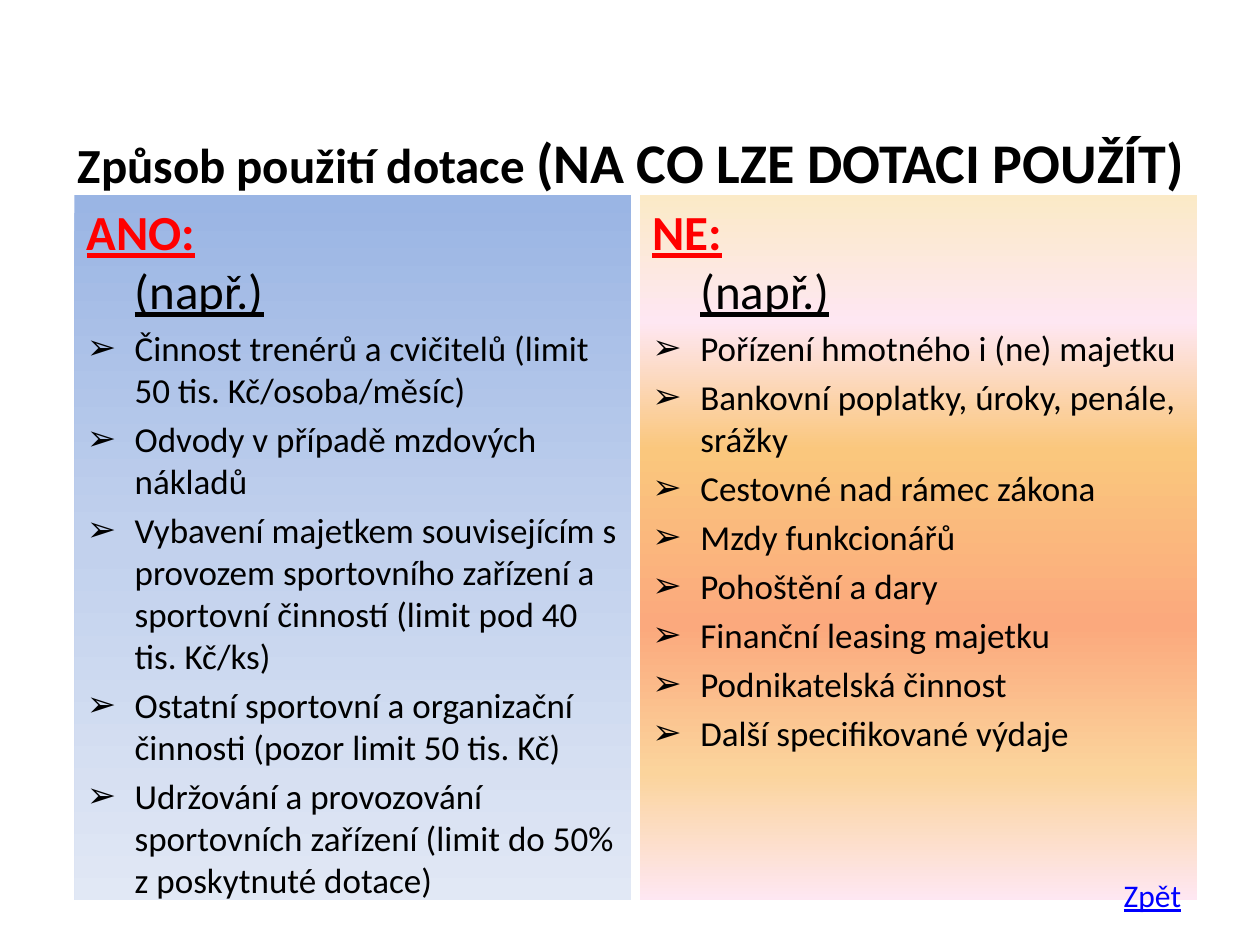
from dataclasses import dataclass

from lxml import etree
from pptx import Presentation
from pptx import util as u
from pptx.dml.color import RGBColor
from pptx.enum import shapes, text
from pptx.oxml.ns import qn


@dataclass(frozen=True)
class Theme:
    font: str = "Calibri"
    ink: str = "000000"
    accent: str = "FF0000"
    link: str = "0000FF"
    yes_fill: tuple = ((0, "9AB5E4"), (50, "C2D1ED"), (100, "E1E8F5"))
    no_fill: tuple = ((0, "FBEAC7"), (18, "FEE7F2"), (36, "FAC77D"),
                      (61, "FBA97D"), (82, "FBD49C"), (100, "FEE7F2"))
    emphasis: int = 32
    heading: int = 28
    body: int = 20
    small: int = 18


THEME = Theme()
INDENT = u.Inches(0.38)

YES_ITEMS = [
    "Činnost trenérů a cvičitelů (limit 50 tis. Kč/osoba/měsíc)",
    "Odvody v případě mzdových nákladů",
    "Vybavení majetkem souvisejícím s provozem sportovního zařízení a "
    "sportovní činností (limit pod 40 tis. Kč/ks)",
    "Ostatní sportovní a organizační činnosti (pozor limit 50 tis. Kč)",
    "Udržování a provozování sportovních zařízení (limit do 50% z poskytnuté dotace)",
]
NO_ITEMS = [
    "Pořízení hmotného i (ne) majetku",
    "Bankovní poplatky, úroky, penále, srážky",
    "Cestovné nad rámec zákona",
    "Mzdy funkcionářů",
    "Pohoštění a dary",
    "Finanční leasing majetku",
    "Podnikatelská činnost",
    "Další specifikované výdaje",
]


def style(font, size, color=THEME.ink, bold=False, underline=False):
    font.name = THEME.font
    font.size = u.Pt(size)
    font.color.rgb = RGBColor.from_string(color)
    font.bold = bold
    font.underline = underline


def add_span(para, words, *look, **more):
    span = para.add_run()
    span.text = words
    style(span.font, *look, **more)


def hang(para, bullet=None):
    """Give the paragraph a hanging indent and, if asked, a bullet."""
    props = para._p.get_or_add_pPr()
    props.set("marL", str(INDENT))
    props.set("indent", str(-INDENT))
    if bullet:
        etree.SubElement(props, qn("a:buFont"), typeface=THEME.font)
        etree.SubElement(props, qn("a:buChar"), char=bullet)


def fill_down(shape, stops):
    """Fill the shape with a gradient running from top to bottom."""
    shape.fill.gradient()
    shape.fill.gradient_angle = 270
    stop_list = shape._element.spPr.find(qn("a:gradFill")).find(qn("a:gsLst"))
    for old in list(stop_list):
        stop_list.remove(old)
    for percent, color in stops:
        stop = etree.SubElement(stop_list, qn("a:gs"), pos=str(percent * 1000))
        etree.SubElement(stop, qn("a:srgbClr"), val=color)


def place_title(page, left, top, width, height):
    title = page.shapes.title
    title.left, title.top, title.width, title.height = left, top, width, height
    frame = title.text_frame
    frame.word_wrap = True
    frame.auto_size = text.MSO_AUTO_SIZE.NONE
    frame.vertical_anchor = text.MSO_ANCHOR.MIDDLE
    frame.margin_left = frame.margin_right = u.Inches(0.05)
    # The panels overlap the foot of the title box, so the text is kept above them.
    frame.margin_top, frame.margin_bottom = 0, u.Inches(0.14)
    para = frame.paragraphs[0]
    para.alignment = text.PP_ALIGN.CENTER
    add_span(para, "Způsob použití dotace ", THEME.heading, bold=True)
    add_span(para, "(NA CO LZE DOTACI POUŽÍT)", THEME.emphasis, bold=True)


def add_panel(page, left, top, width, height, heading, items, stops):
    panel = page.shapes.add_shape(shapes.MSO_SHAPE.RECTANGLE, left, top, width, height)
    panel.shadow.inherit = False
    panel.line.fill.background()
    fill_down(panel, stops)
    frame = panel.text_frame
    frame.word_wrap = True
    frame.vertical_anchor = text.MSO_ANCHOR.TOP

    para = frame.paragraphs[0]
    hang(para)
    para.alignment = text.PP_ALIGN.LEFT
    add_span(para, heading, THEME.heading, THEME.accent, bold=True, underline=True)
    para.add_line_break()
    add_span(para, "(např.)", THEME.heading, underline=True)

    for item in items:
        para = frame.add_paragraph()
        hang(para, "➢")
        para.alignment = text.PP_ALIGN.LEFT
        para.space_before = u.Pt(4)
        para.text = item
        style(para.font, THEME.body)


def add_back_label(page, left, top, width, height):
    box = page.shapes.add_textbox(left, top, width, height)
    box.text_frame.word_wrap = True
    para = box.text_frame.paragraphs[0]
    para.text = "Zpět"
    style(para.font, THEME.small, THEME.link, underline=True)


def main():
    deck = Presentation()
    deck.slide_width, deck.slide_height = u.Inches(10), u.Inches(7.5)
    page = deck.slides.add_slide(deck.slide_layouts[5])

    place_title(page, u.Inches(0.51), u.Inches(0.99), u.Inches(9), u.Inches(0.71))
    panels = [("ANO:", YES_ITEMS, THEME.yes_fill), ("NE:", NO_ITEMS, THEME.no_fill)]
    for column, content in enumerate(panels):
        add_panel(page, u.Inches(0.59 + 4.49 * column), u.Inches(1.55),
                  u.Inches(4.42), u.Inches(5.59), *content)
    add_back_label(page, u.Inches(8.82), u.Inches(6.9), u.Inches(1.18), u.Inches(0.4))

    deck.save("out.pptx")


if __name__ == "__main__":
    main()
